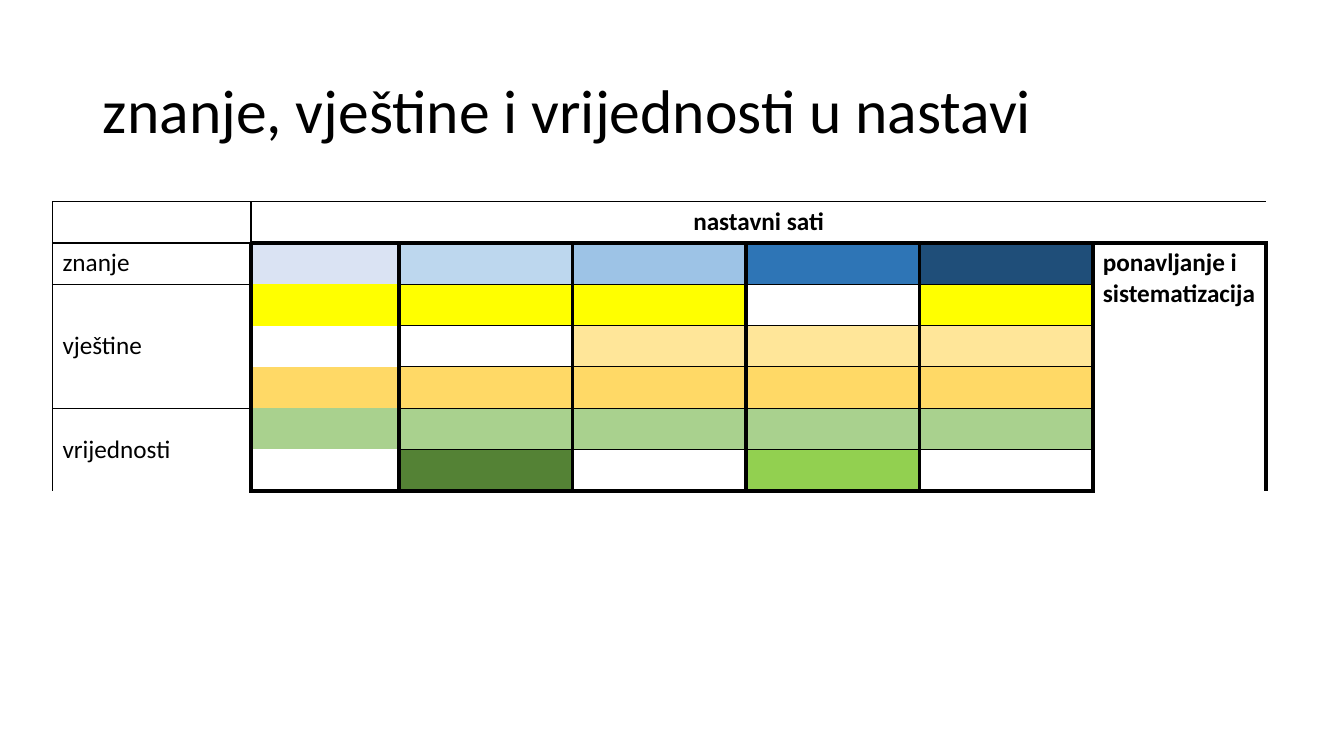
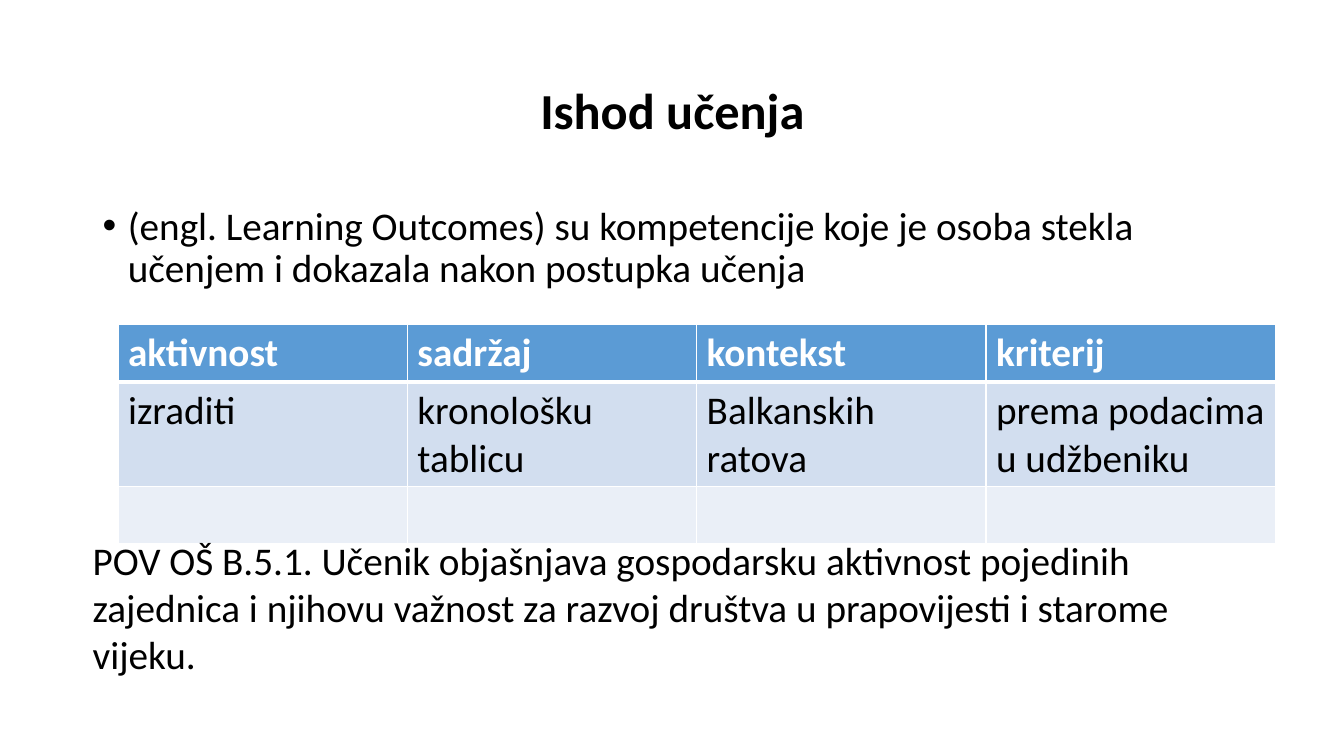
import dataclasses

import pptx
import pptx.dml.color
import pptx.enum.text
import pptx.oxml.ns
import pptx.util
from lxml import etree

Inches = pptx.util.Inches
Pt = pptx.util.Pt
ALIGN = pptx.enum.text.PP_ALIGN
ANCHOR = pptx.enum.text.MSO_ANCHOR
qn = pptx.oxml.ns.qn


@dataclasses.dataclass(frozen=True)
class Theme:
    font: str = "Calibri"
    black: str = "000000"
    white: str = "FFFFFF"
    header: str = "5B9BD5"
    bands: tuple = ("D2DEEF", "EAEFF7")
    title: int = 44
    heading: int = 36
    body: int = 28
    label: int = 18
    thin: int = 1
    thick: int = 3


T = Theme()
W = T.white
LESSON_FILLS = (
    ("DAE3F3", "BDD7EE", "9DC3E6", "2E75B6", "1F4E79"),
    ("FFFF00", "FFFF00", "FFFF00", W, "FFFF00"),
    (W, W, "FFE699", "FFE699", "FFE699"),
    ("FFD966",) * 5,
    ("A9D18E",) * 5,
    (W, "548235", W, "92D050", W),
)
OUTCOME_ROWS = (
    ("aktivnost", "sadržaj", "kontekst", "kriterij"),
    ("izraditi", "kronološku tablicu", "Balkanskih ratova", "prema podacima u udžbeniku"),
    ("", "", "", ""),
)


def rgb(value):
    return pptx.dml.color.RGBColor.from_string(value)


def write(tf, text, size, color=T.black, bold=False, align=ALIGN.LEFT):
    tf.text = text
    p = tf.paragraphs[0]
    p.alignment = align
    for r in p.runs:
        r.font.name = T.font
        r.font.size = Pt(size)
        r.font.bold = bold
        r.font.color.rgb = rgb(color)
    return p


def add_titled_slide(prs, text, size, **style):
    s = prs.slides.add_slide(prs.slide_layouts[5])
    sp = s.shapes.title
    sp.left, sp.top, sp.width, sp.height = map(Inches, (0.92, 0.4, 11.5, 1.45))
    tf = sp.text_frame
    tf.vertical_anchor = ANCHOR.MIDDLE
    write(tf, text, size, **style).line_spacing = 0.9
    return s


def add_text(s, box, text):
    tf = s.shapes.add_textbox(*map(Inches, box)).text_frame
    tf.word_wrap = True
    return write(tf, text, T.body)


def add_bullet(p, indent):
    pPr = p._p.get_or_add_pPr()
    pPr.set("marL", str(Inches(indent)))
    pPr.set("indent", str(-Inches(indent)))
    etree.SubElement(pPr, qn("a:buFont")).set("typeface", "Arial")
    etree.SubElement(pPr, qn("a:buChar")).set("char", "•")


def add_table(s, left, top, cols, rows):
    frame = s.shapes.add_table(len(rows), len(cols), Inches(left), Inches(top),
                               Inches(sum(cols)), Inches(sum(rows)))
    table = frame.table
    table.first_row = table.horz_banding = False
    for column, width in zip(table.columns, cols):
        column.width = Inches(width)
    for row, height in zip(table.rows, rows):
        row.height = Inches(height)
    return table


def style_cell(cell, fill, color, left, right, top, bottom):
    cell.fill.solid()
    cell.fill.fore_color.rgb = rgb(fill)
    tcPr = cell._tc.get_or_add_tcPr()
    sides = zip("LRTB", (left, right, top, bottom))
    for i, (side, width) in enumerate(sides):
        ln = etree.Element(qn(f"a:ln{side}"), w=str(Pt(width)))
        if width:
            solid = etree.SubElement(ln, qn("a:solidFill"))
            etree.SubElement(solid, qn("a:srgbClr")).set("val", color)
        else:
            etree.SubElement(ln, qn("a:noFill"))
        tcPr.insert(i, ln)


def lesson_vertical(row, edge):
    if row == 0:
        return T.thin if edge in (0, 1, 7) else 0
    return T.thin if edge == 0 else T.thick


def lesson_horizontal(edge, col):
    if col == 0:
        return T.thin if edge in (0, 1, 2, 5, 7) else 0
    if edge in (1, 7):
        return T.thick
    return T.thin if edge == 0 or 2 <= col <= 5 else 0


def add_lesson_table(s):
    table = add_table(s, 0.52, 2, [1.97, 1.47] + [1.72] * 5, [0.41] * 7)
    for row in range(7):
        for col in range(7):
            colored = row > 0 and 1 <= col <= 5
            fill = LESSON_FILLS[row - 1][col - 1] if colored else W
            style_cell(table.cell(row, col), fill, T.black,
                       lesson_vertical(row, col), lesson_vertical(row, col + 1),
                       lesson_horizontal(row, col), lesson_horizontal(row + 1, col))
    for first, last in (((0, 1), (0, 6)), ((1, 6), (6, 6)), ((2, 0), (4, 0)), ((5, 0), (6, 0))):
        table.cell(*first).merge(table.cell(*last))
    write(table.cell(0, 1).text_frame, "nastavni sati", T.label, bold=True, align=ALIGN.CENTER)
    write(table.cell(1, 6).text_frame, "ponavljanje i sistematizacija", T.label, bold=True)
    for row, text in ((1, "znanje"), (2, "vještine"), (5, "vrijednosti")):
        cell = table.cell(row, 0)
        write(cell.text_frame, text, T.label)
        if row > 1:
            cell.vertical_anchor = ANCHOR.MIDDLE


def add_outcome_table(s):
    table = add_table(s, 1.17, 3.22, [2.87] * 4, [0.57, 1.03, 0.57])
    fills = (T.header,) + T.bands
    for row, texts in enumerate(OUTCOME_ROWS):
        header = row == 0
        top = T.thick if row == 1 else T.thin
        bottom = T.thick if header else T.thin
        for col, text in enumerate(texts):
            cell = table.cell(row, col)
            style_cell(cell, fills[row], T.white, T.thin, T.thin, top, bottom)
            if text:
                write(cell.text_frame, text, T.body, T.white if header else T.black, header)


def build_lessons(prs):
    s = add_titled_slide(prs, "znanje, vještine i vrijednosti u nastavi", T.title)
    add_lesson_table(s)


def build_outcomes(prs):
    s = add_titled_slide(prs, "Ishod učenja", T.heading, bold=True, align=ALIGN.CENTER)
    p = add_text(s, (0.92, 2, 11.5, 1.1),
                 "(engl. Learning Outcomes) su kompetencije koje je osoba stekla "
                 "učenjem i dokazala nakon postupka učenja")
    p.line_spacing = 0.9
    p.space_before = Pt(10)
    add_bullet(p, 0.25)
    add_outcome_table(s)
    add_text(s, (0.82, 5.27, 11.85, 1.51),
             "POV OŠ B.5.1. Učenik objašnjava gospodarsku aktivnost pojedinih zajednica "
             "i njihovu važnost za razvoj društva u prapovijesti i starome vijeku.")


def main():
    prs = pptx.Presentation()
    prs.slide_width = Inches(13.33)
    prs.slide_height = Inches(7.5)
    build_lessons(prs)
    build_outcomes(prs)
    prs.save("out.pptx")


if __name__ == "__main__":
    main()
